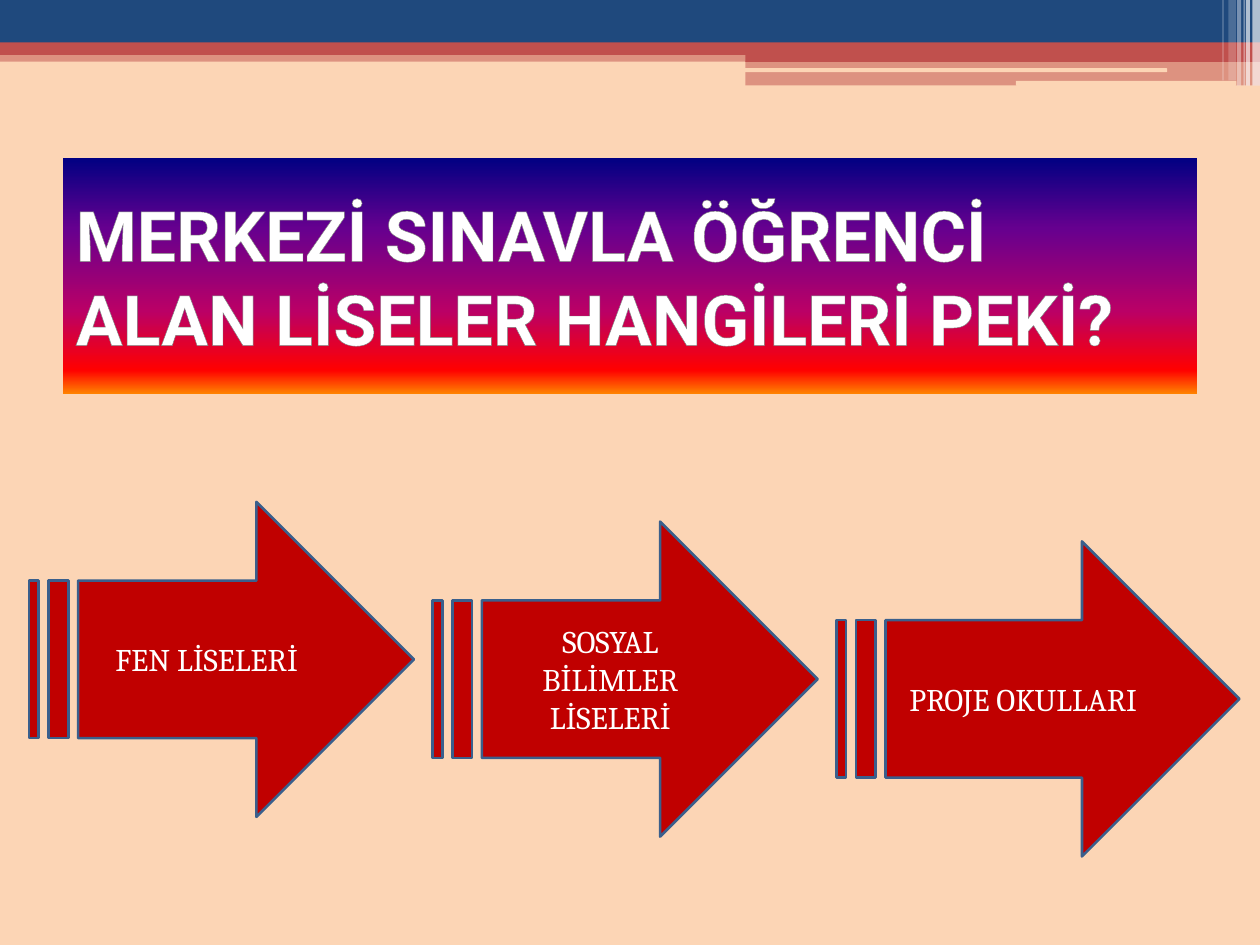
import pptx
import pptx.util
import pptx.dml.color
import pptx.enum.shapes
import pptx.enum.text
import pptx.oxml
import pptx.oxml.ns

Pt = pptx.util.Pt
RGB = pptx.dml.color.RGBColor
KIND = pptx.enum.shapes.MSO_SHAPE
ALIGN = pptx.enum.text.PP_ALIGN
MIDDLE = pptx.enum.text.MSO_ANCHOR.MIDDLE

PEACH = RGB(0xFC, 0xD5, 0xB5)
NAVY = RGB(0x1F, 0x49, 0x7D)
BRICK = RGB(0xC0, 0x50, 0x4D)
WHITE = RGB(0xFF, 0xFF, 0xFF)
RED = RGB(0xC0, 0x00, 0x00)
EDGE = RGB(0x3A, 0x5F, 0x8C)
GREY = RGB(0x7D, 0x7D, 0x7D)
BLEND = [
    (0, RGB(0x00, 0x00, 0x82)),
    (30, RGB(0x66, 0x00, 0x8F)),
    (65, RGB(0xBA, 0x00, 0x66)),
    (90, RGB(0xFF, 0x00, 0x00)),
    (100, RGB(0xFF, 0x82, 0x00)),
]
HEAD = {"name": "Roboto", "size": Pt(40), "bold": True}
LABEL = {"name": "Cambria", "size": Pt(18), "bold": False}
FRAME = {"word_wrap": True, "vertical_anchor": MIDDLE,
         "auto_size": pptx.enum.text.MSO_AUTO_SIZE.NONE}


def node(xml):
    space = pptx.oxml.ns.nsdecls("a")
    return pptx.oxml.parse_xml(xml.replace(" ", f" {space} ", 1))


def assign(item, values):
    for key, value in values.items():
        setattr(item, key, value)


class Deck:
    def __init__(self):
        self.file = pptx.Presentation()
        assign(self.file, {"slide_width": Pt(720), "slide_height": Pt(540)})
        self.slide = self.file.slides.add_slide(self.file.slide_layouts[5])
        back = self.slide.background.fill
        back.solid()
        back.fore_color.rgb = PEACH

    def shape(self, kind, box, color):
        shape = self.slide.shapes.add_shape(kind, *map(Pt, box))
        shape.shadow.inherit = False
        shape.fill.solid()
        shape.fill.fore_color.rgb = color
        shape.line.fill.background()
        return shape

    def band(self, box, color, alpha=100, kind=KIND.RECTANGLE):
        shape = self.shape(kind, box, color)
        if alpha < 100:
            tint = shape._element.spPr.find(".//" + pptx.oxml.ns.qn("a:srgbClr"))
            tint.append(node(f'<a:alpha val="{alpha * 1000}"/>'))

    def label(self, shape, text, style, align):
        frame = shape.text_frame
        assign(frame, FRAME)
        frame.text = text
        line = frame.paragraphs[0]
        line.alignment = align
        font = line.runs[0].font
        assign(font, style)
        font.color.rgb = WHITE
        return line.runs[0]

    def title(self, box, text):
        shape = self.slide.shapes.title
        assign(shape, dict(zip(("left", "top", "width", "height"), map(Pt, box))))
        stops = "".join(
            f'<a:gs pos="{stop * 1000}"><a:srgbClr val="{color}"/></a:gs>'
            for stop, color in BLEND)
        shape._element.spPr.append(node(
            f'<a:gradFill rotWithShape="1"><a:gsLst>{stops}</a:gsLst>'
            '<a:lin ang="5400000" scaled="0"/></a:gradFill>'))
        run = self.label(shape, text, HEAD, ALIGN.LEFT)
        run._r.get_or_add_rPr().insert(0, node(
            f'<a:ln w="{int(Pt(0.83))}"><a:solidFill><a:srgbClr val="{GREY}"/>'
            '</a:solidFill></a:ln>'))
        shape._element.getparent().append(shape._element)

    def arrow(self, box, text):
        shape = self.shape(KIND.STRIPED_RIGHT_ARROW, box, RED)
        shape.line.color.rgb = EDGE
        shape.line.width = Pt(1.5)
        self.label(shape, text, LABEL, ALIGN.CENTER)


def main():
    deck = Deck()
    for box, color, alpha in [
        ((0, 28.8, 720, 6.5), BRICK, 50),
        ((0, 0, 720, 24.5), NAVY, 100),
        ((0, 24.2, 720, 7.2), BRICK, 100),
        ((426, 28.2, 294, 7.2), BRICK, 100),
        ((426, 34.6, 294, 14.2), BRICK, 50),
    ]:
        deck.band(box, color, alpha)
    for box in [(425.5, 39, 241.5, 2.2), (580.5, 46.2, 126, 2.8)]:
        deck.band(box, PEACH, kind=KIND.ROUNDED_RECTANGLE)
    for left, width, height, alpha in [
        (715.6, 4.4, 49, 65),
        (712, 2.2, 49, 65),
        (710.6, 0.7, 49, 60),
        (707, 2.2, 49, 40),
        (702, 4.3, 46, 20),
        (698.5, 0.7, 46, 30),
    ]:
        deck.band((left, 0, width, height), WHITE, alpha)

    deck.title((36, 90, 648, 135),
               "MERKEZİ SINAVLA ÖĞRENCİ ALAN LİSELER HANGİLERİ PEKİ?")
    schools = [("FEN LİSELERİ", 220), ("SOSYAL BİLİMLER LİSELERİ", 220),
               ("PROJE OKULLARI", 230.4)]
    for step, (text, width) in enumerate(schools):
        deck.arrow((16.5 + 230.7 * step, 286.8 + 11.3 * step, width, 180), text)
    deck.file.save("out.pptx")


if __name__ == "__main__":
    main()
